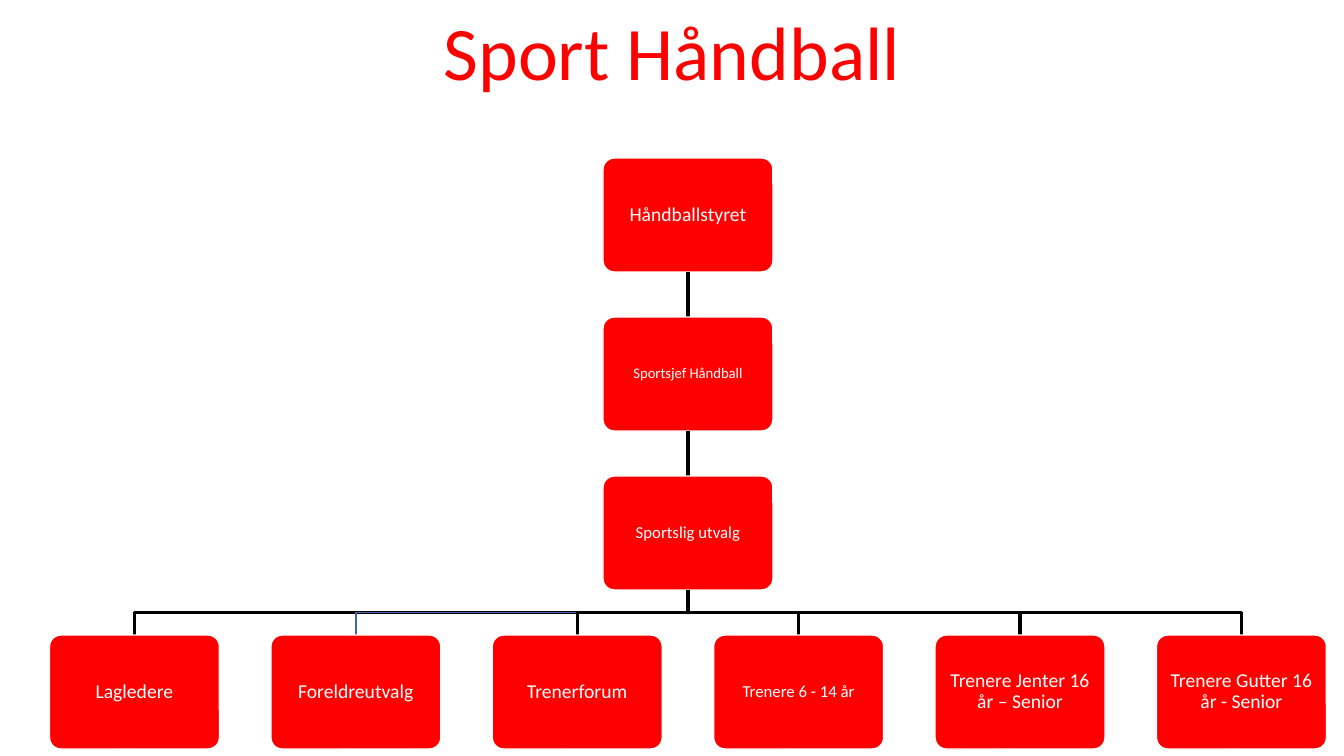
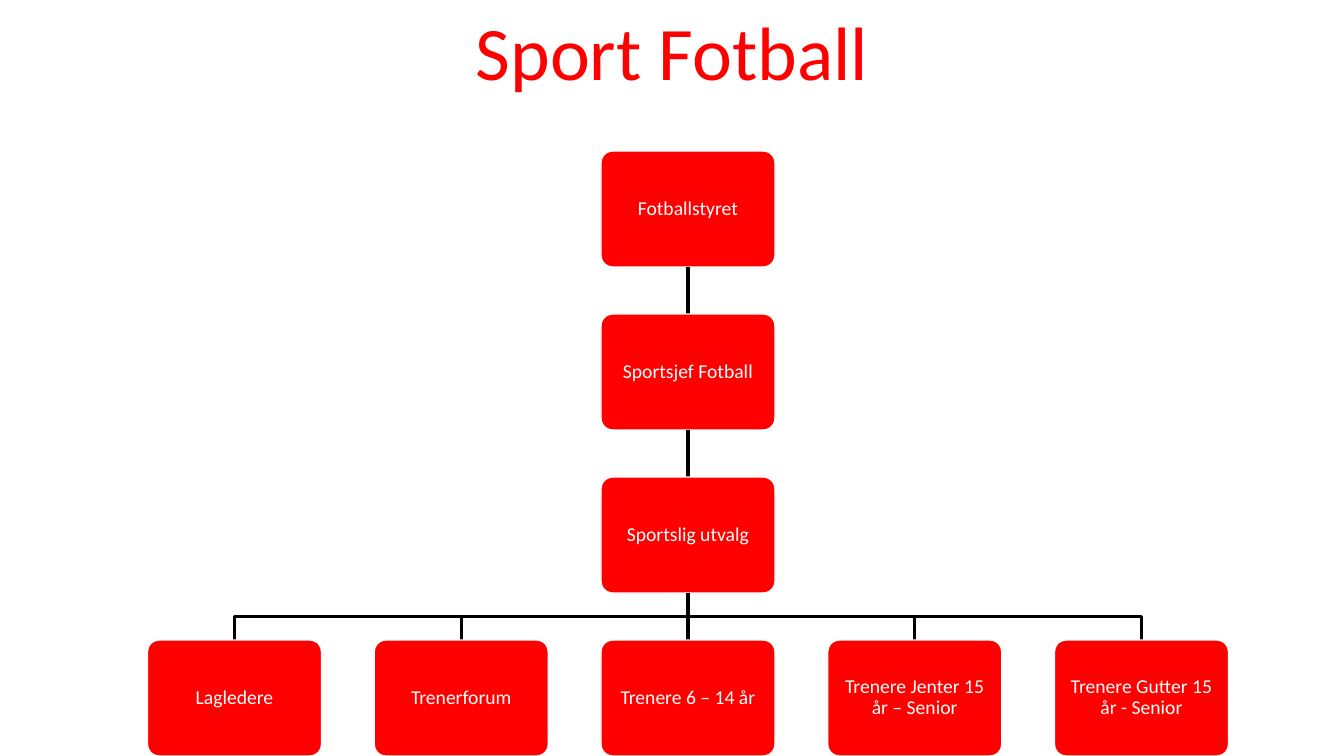
import pptx
import pptx.util
import pptx.dml.color
import pptx.enum.shapes
import pptx.enum.text
import lxml.etree

# Content: chain runs downwards, team runs across below it
# Each entry is (text, size in points)
CHARTS = [
    dict(title="Sport Håndball", top=158, step=159, box=(170, 114), span=1107,
         chain=[("Håndballstyret", 14), ("Sportsjef Håndball", 10.5),
                ("Sportslig utvalg", 12)],
         team=[("Lagledere", 14), ("Foreldreutvalg", 14), ("Trenerforum", 14),
               ("Trenere 6 - 14 år", 12),
               ("Trenere Jenter 16 år – Senior", 14),
               ("Trenere Gutter 16 år - Senior", 14)],
         thin="Foreldreutvalg"),
    dict(title="Sport Fotball", top=151, step=163, box=(174, 116), span=907,
         chain=[("Fotballstyret", 14), ("Sportsjef Fotball", 14),
                ("Sportslig utvalg", 14)],
         team=[("Lagledere", 14), ("Trenerforum", 14),
               ("Trenere 6 – 14 år", 14),
               ("Trenere Jenter 15 år – Senior", 14),
               ("Trenere Gutter 15 år - Senior", 14)],
         thin=None),
]

# Shared style
WIDE, HIGH, MID = 1344, 756, 688
SCALE = 914400 / 100.8
FONT = "Calibri"
RED, WHITE, BLACK, BLUE = "FF0000", "FFFFFF", "000000", "3E67B2"
THICK, THIN = (BLACK, 2.25), (BLUE, 1)
INSET = 6


def px(n):
    return pptx.util.Emu(round(n * SCALE))


def color(code):
    return pptx.dml.color.RGBColor.from_string(code)


def write(frame, text, size, ink):
    frame.word_wrap = True
    para = frame.paragraphs[0]
    para.alignment = pptx.enum.text.PP_ALIGN.CENTER
    run = para.add_run()
    run.text = text
    run.font.name = FONT
    run.font.size = pptx.util.Pt(size)
    run.font.color.rgb = color(ink)
    return para


def stroke(line, ink, width):
    line.color.rgb = color(ink)
    line.width = pptx.util.Pt(width)


def title(slide, text):
    area = slide.shapes.add_textbox(0, 0, px(WIDE), px(102))
    write(area.text_frame, text, 54, RED)
    area.text_frame.auto_size = pptx.enum.text.MSO_AUTO_SIZE.SHAPE_TO_FIT_TEXT


def box(slide, x, y, size, label):
    wide, high = size
    kind = pptx.enum.shapes.MSO_SHAPE.ROUNDED_RECTANGLE
    card = slide.shapes.add_shape(kind, px(x - wide / 2), px(y), px(wide), px(high))
    card.adjustments[0] = 0.1
    card.shadow.inherit = False
    card.fill.solid()
    card.fill.fore_color.rgb = color(RED)
    stroke(card.line, WHITE, 1)
    frame = card.text_frame
    frame.margin_left = frame.margin_right = px(INSET)
    frame.margin_top = frame.margin_bottom = px(INSET)
    frame.vertical_anchor = pptx.enum.text.MSO_ANCHOR.MIDDLE
    write(frame, *label, WHITE).line_spacing = 0.9


def link(slide, x, top, end, pen):
    """Join the middle column at top to column x at end."""
    if x == MID:
        kind = pptx.enum.shapes.MSO_CONNECTOR.STRAIGHT
        wire = slide.shapes.add_connector(kind, px(x), px(top), px(x), px(end))
        lxml.etree.SubElement(wire.line._get_or_add_ln().getparent(),
                              pptx.oxml.ns.qn("a:effectLst"))
    else:
        bend = (top + end) / 2
        path = slide.shapes.build_freeform(px(MID), px(top))
        path.add_line_segments([(px(MID), px(bend)), (px(x), px(bend)),
                                (px(x), px(end))], close=False)
        wire = path.convert_to_shape()
        wire.fill.background()
        wire.shadow.inherit = False
    stroke(wire.line, *pen)


def chart(slide, top, step, size, span, chain, team, thin):
    high = size[1]
    # Chain of command
    for i, label in enumerate(chain):
        y = top + i * step
        if i:
            link(slide, MID, y - step + high, y, THICK)
        box(slide, MID, y, size, label)
    # Team row
    y = top + len(chain) * step
    for i, label in enumerate(team):
        x = MID + span * (i / (len(team) - 1) - 0.5)
        link(slide, x, y - step + high, y, THIN if label[0] == thin else THICK)
        box(slide, x, y, size, label)


def main():
    deck = pptx.Presentation()
    deck.slide_width, deck.slide_height = px(WIDE), px(HIGH)
    for data in CHARTS:
        slide = deck.slides.add_slide(deck.slide_layouts[6])
        title(slide, data["title"])
        chart(slide, data["top"], data["step"], data["box"], data["span"],
              data["chain"], data["team"], data["thin"])
    deck.save("out.pptx")


if __name__ == "__main__":
    main()
